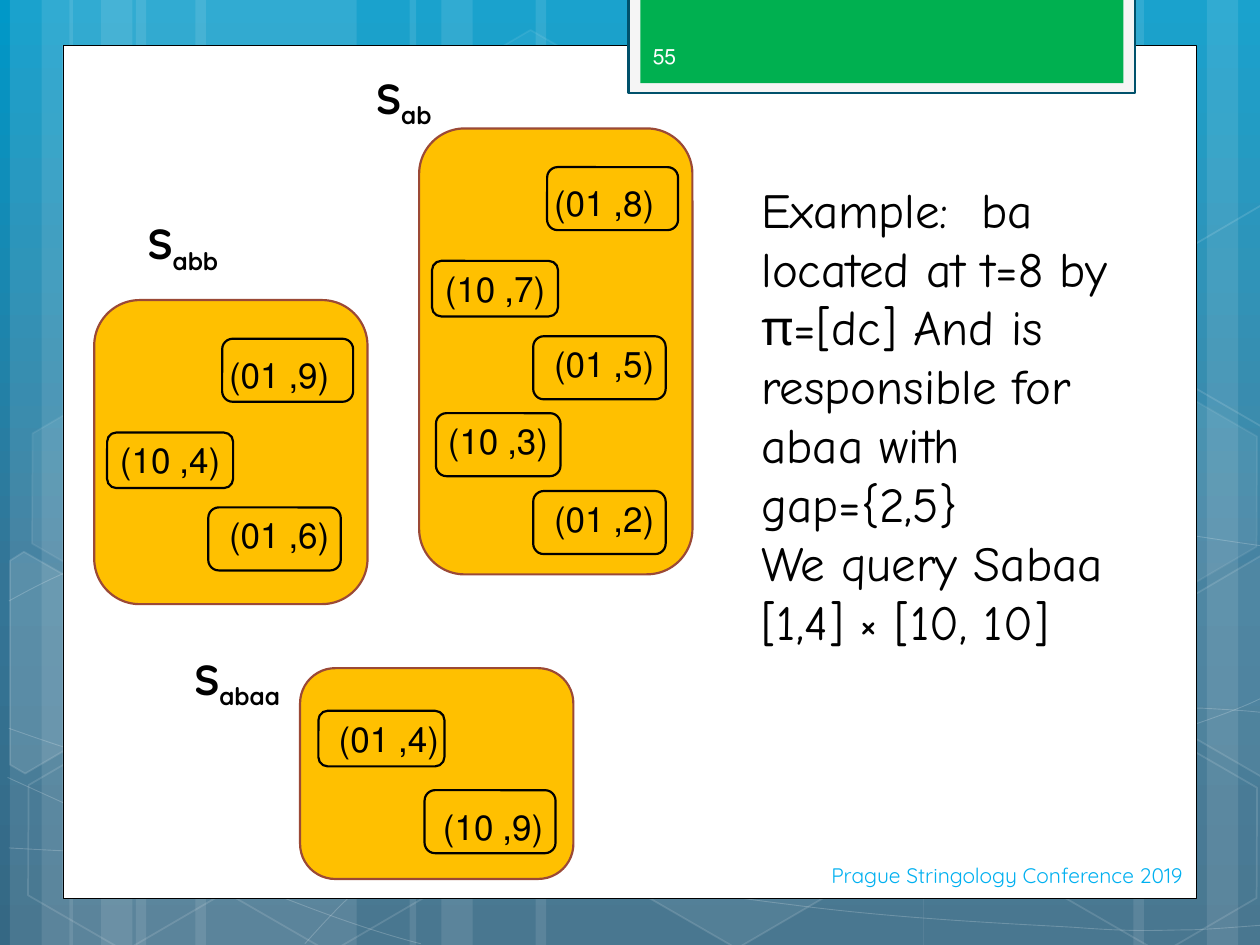
from copy import deepcopy

from lxml import etree
from pptx import Presentation
from pptx.dml.color import RGBColor
from pptx.enum.shapes import MSO_SHAPE as Shape
from pptx.enum.text import MSO_ANCHOR as Anchor, MSO_AUTO_SIZE as AutoSize, PP_ALIGN as Align
from pptx.oxml.ns import qn
from pptx.util import Cm, Pt

WHITE = RGBColor(0xFF, 0xFF, 0xFF)
BLACK = RGBColor(0x00, 0x00, 0x00)
SKY = (RGBColor(0x00, 0x98, 0xC8), RGBColor(0x34, 0x75, 0x96), RGBColor(0x35, 0x68, 0x84))
TAB_EDGE = RGBColor(0x00, 0x51, 0x6B)
TAB_PAPER = RGBColor(0xF5, 0xF5, 0xF5)
GREEN = RGBColor(0x00, 0xB0, 0x50)
NUMBER = RGBColor(0xFE, 0xFE, 0xFE)
FOOTER = RGBColor(0x00, 0xB0, 0xF0)
AMBER = RGBColor(0xFF, 0xC0, 0x00)
BROWN = RGBColor(0x9B, 0x49, 0x36)

HAND, ROUND = "Comic Neue", "Quicksand"
INCH = 2.54

WAVES = [
    [(0.07, 6.73), (0.61, 6.76), (1.15, 6.79), (1.9, 6.78), (2.65, 6.77), (3.58, 6.75), (4.58, 6.65),
     (5.58, 6.55), (7, 6.36), (7.92, 6.17), (8.83, 5.98), (9.77, 5.68), (10.07, 5.51)],
    [(0.07, 4.77), (0.36, 4.61), (0.65, 4.46), (1.21, 4.31), (1.78, 4.16), (2.59, 3.94), (3.47, 3.87),
     (4.36, 3.8), (5.44, 3.79), (6.54, 3.87), (7.64, 3.95), (9.47, 4.26), (10.07, 4.34)],
    [(0.06, 6.17), (1.27, 6.72), (2.47, 7.27), (3.34, 7.49)],
    [(0.07, 5.78), (0.38, 5.89), (0.7, 6), (1.28, 6.16), (1.86, 6.31), (2.73, 6.56), (3.57, 6.73),
     (4.4, 6.9), (5.45, 7.08), (6.28, 7.18), (7.11, 7.29), (8, 7.33), (8.53, 7.36),
     (9.05, 7.4), (9.19, 7.38), (9.45, 7.38), (9.71, 7.37), (9.89, 7.35), (10.07, 7.34)],
    [(2.42, 7.49), (2.6, 7.29), (2.78, 7.09), (3.02, 6.91), (3.26, 6.73), (3.6, 6.53), (3.88, 6.39),
     (4.16, 6.25), (4.33, 6.19), (4.7, 6.09), (5.06, 5.99), (5.73, 5.85), (6.08, 5.78),
     (6.44, 5.71), (6.49, 5.71), (6.8, 5.69), (7.11, 5.66), (7.6, 5.63), (7.94, 5.62),
     (8.29, 5.61), (8.86, 5.62), (8.86, 5.62), (9.08, 5.62), (9.3, 5.62), (9.53, 5.62),
     (9.71, 5.63), (9.88, 5.64), (9.97, 5.65), (10.06, 5.66), (10.03, 5.65), (10.06, 5.66)],
]
HEXAGONS = [(8.48, 0.91, 4, 8), (12.62, 14.96, 6, 12), (0.28, 15.01, 0, 12), (0.36, 7.92, 7, 8),
            (4.42, 15.04, 0, 12), (19.13, 11.51, 10, 12), (21.18, 15.06, 0, 12), (21.18, 7.98, 7, 8)]
CUT_HEXAGONS = [
    ([(0.08, 4.45), (0.19, 4.38), (0.96, 4.82), (0.95, 5.7), (0.2, 6.14), (0.08, 6.07)], 10),
    ([(9.26, 4.85), (10.01, 4.41), (10.09, 4.46), (10.09, 6.13), (10.02, 6.17), (9.26, 5.73)], 4),
    ([(9.26, 2.07), (10.01, 1.63), (10.1, 1.68), (10.09, 3.35), (10.02, 3.39), (9.26, 2.95)], 0),
]

LOWER = (2.07, 2.92, 0, 2.3, 2.67, 1.27)
LEFT = (-0.61, 3.4, 0, 0.26, 2.54, 1.12)
MIDDLE = (0.13, 2.72, 0, 0.34, 2.51, 1.27)
TOP = (1.84, 3.15, 0.17, 2.58, 2.64, 1.27)
FIRST = (-0.35, 3.4, 0, 0.37, 2.54, 1.12)
LAST = (2, 3.15, 0.18, 2.51, 2.64, 1.27)
SETS = [
    ((8.45, 2.59, 5.51, 8.99), "ab", (-1.71, -1.26, 2.21),
     [("(2, 01)", 7.31, LOWER), ("(7, 10)", 2.67, LEFT), ("(3, 10)", 5.74, MIDDLE),
      ("(8, 01)", 0.78, TOP), ("(5, 01)", 4.19, LOWER)]),
    ((1.9, 6.05, 5.51, 6.13), "abb", (0.54, -1.79, 2.21),
     [("(4, 10)", 2.67, LEFT), ("(9, 01)", 0.78, TOP), ("(6, 01)", 4.18, LOWER)]),
    ((6.05, 13.47, 5.51, 4.25), "abaa", (-3.05, -0.43, 2.9),
     [("(4, 01)", 0.86, FIRST), ("(9, 10)", 2.46, LAST)]),
]


def set_alpha(fill, percent):
    """Make a solid fill partly transparent."""
    color = fill._xPr.find(qn("a:solidFill"))[0]
    etree.SubElement(color, qn("a:alpha")).set("val", str(percent * 1000))


def paint(shape, fill=None, line=None, width=1.25, fill_alpha=100, line_alpha=100):
    """Set fill, line and transparency and drop the shadow."""
    shape.shadow.inherit = False
    for part, color, alpha in ((shape.fill, fill, fill_alpha), (shape.line.fill, line, line_alpha)):
        if color is None or alpha == 0:
            part.background()
            continue
        part.solid()
        part.fore_color.rgb = color
        if alpha < 100:
            set_alpha(part, alpha)
    if line is not None:
        shape.line.width = Pt(width)


def add_block(slide, kind, box, **style):
    """Add a painted preset shape in a box given in centimetres."""
    shape = slide.shapes.add_shape(kind, *map(Cm, box))
    paint(shape, **style)
    return shape


def add_outline(slide, points, close, **style):
    """Add a painted freeform through points given in inches."""
    places = [(Cm(x * INCH), Cm(y * INCH)) for x, y in points]
    builder = slide.shapes.build_freeform(*places[0], scale=1.0)
    builder.add_line_segments(places[1:], close=close)
    shape = builder.convert_to_shape()
    paint(shape, **style)
    return shape


def bend(shape):
    """Turn each three line segments of a freeform into one cubic curve."""
    segments = shape._element.findall(".//" + qn("a:lnTo"))
    for start in range(0, len(segments), 3):
        curve = etree.Element(qn("a:cubicBezTo"))
        segments[start].addprevious(curve)
        for segment in segments[start:start + 3]:
            curve.append(segment[0])
            segment.getparent().remove(segment)


def add_text(slide, box, lines, font, size, color, align=None, rtl=True, anchor=Anchor.TOP, grow=True):
    """Add a text box and return its text frame."""
    text_frame = slide.shapes.add_textbox(*map(Cm, box)).text_frame
    text_frame.word_wrap = True
    text_frame.vertical_anchor = anchor
    text_frame.auto_size = AutoSize.SHAPE_TO_FIT_TEXT if grow else AutoSize.NONE
    text_frame.text = "\n".join(lines)
    for paragraph in text_frame.paragraphs:
        paragraph.alignment = align
        if rtl:
            paragraph._p.get_or_add_pPr().set("rtl", "1")
        for run in paragraph.runs:
            run.font.name, run.font.size = font, Pt(size)
            run.font.color.rgb = color
    return text_frame


def set_background(slide):
    """Fill the slide with the vertical blue gradient."""
    fill = slide.background.fill
    fill.gradient()
    fill.gradient_angle = 270
    stop_list = slide._element.find(".//" + qn("a:gsLst"))
    stop_list.insert(1, deepcopy(stop_list[0]))
    for stop, position, color in zip(fill.gradient_stops, (0, 0.62, 1), SKY):
        stop.position = position
        stop.color.rgb = color


def add_stripes(slide, edge, wide=4.45, mirrored=False):
    """Add a cluster of three pale stripes measured from its edge."""
    for offset, width in ((2.54, wide), (0, 1.27), (0.64, 2.11)):
        left = edge - offset - width if mirrored else edge + offset
        add_block(slide, Shape.RECTANGLE, (left, 0, width, 19.05), fill=WHITE, fill_alpha=10)


def add_decoration(slide):
    """Add the stripes, waves and hexagons behind the page."""
    add_stripes(slide, 0.2)
    add_stripes(slide, 1.4)
    add_stripes(slide, 25.6, mirrored=True)
    add_stripes(slide, 8.26, wide=7.82)
    for wave in WAVES:
        bend(add_outline(slide, wave, False, line=WHITE, width=0.5, line_alpha=20))
    for left, top, fill_alpha, line_alpha in HEXAGONS:
        hexagon = add_block(slide, Shape.HEXAGON, (left, top, 4.45, 3.86), fill=WHITE, line=WHITE,
                            width=1, fill_alpha=fill_alpha, line_alpha=line_alpha)
        hexagon.adjustments[0] = 0.285
        hexagon.rotation = 30
    for points, fill_alpha in CUT_HEXAGONS:
        add_outline(slide, points, True, fill=WHITE, line=WHITE, width=1,
                    fill_alpha=fill_alpha, line_alpha=12)


def add_page(slide, box):
    """Add the white page with its number tab and footer."""
    left, top = box[:2]
    add_block(slide, Shape.RECTANGLE, box, fill=WHITE, line=BLACK, width=0.5)
    add_block(slide, Shape.RECTANGLE, (left + 11.4, top - 0.96, 10.21, 1.93), fill=TAB_PAPER, line=TAB_EDGE)
    add_block(slide, Shape.RECTANGLE, (left + 11.64, top - 0.96, 9.74, 1.73), fill=GREEN)
    add_text(slide, (left + 11.64, top - 0.29, 3.71, 1.02), ["55"], ROUND, 12, NUMBER,
             anchor=Anchor.MIDDLE, grow=False)
    add_text(slide, (left + 13.1, top + 16.22, 9.73, 1.02), ["Prague Stringology Conference 2019"],
             ROUND, 12, FOOTER, Align.RIGHT, anchor=Anchor.MIDDLE, grow=False)


def add_set(slide, box, subscript, label_place, entries):
    """Add one panel with its framed pairs and its label."""
    left, top = box[:2]
    add_block(slide, Shape.ROUNDED_RECTANGLE, box, fill=AMBER, line=BROWN)
    for pair, drop, (text_x, text_width, text_drop, frame_x, width, height) in entries:
        add_text(slide, (left + text_x, top + drop + text_drop, text_width, 1.12), [pair],
                 HAND, 20, BLACK, Align.RIGHT)
        add_block(slide, Shape.ROUNDED_RECTANGLE, (left + frame_x, top + drop, width, height), line=BLACK)
    label_x, label_y, label_width = label_place
    label = add_text(slide, (left + label_x, top + label_y, label_width, 1.27), ["S"],
                     ROUND, 24, BLACK, Align.RIGHT)
    paragraph = label.paragraphs[0]
    run = paragraph.add_run()
    run.text = subscript
    run.font.name, run.font.size = ROUND, Pt(24)
    run.font.color.rgb = BLACK
    run.font._element.set("baseline", "-25000")
    for part in paragraph.runs:
        part.font.bold = True


def main():
    """Build and save the slide."""
    presentation = Presentation()
    presentation.slide_width, presentation.slide_height = Cm(25.4), Cm(19.05)
    slide = presentation.slides.add_slide(presentation.slide_layouts[6])
    set_background(slide)
    add_decoration(slide)
    add_page(slide, (1.27, 0.91, 22.86, 17.2))
    for box, subscript, label_place, entries in SETS:
        add_set(slide, box, subscript, label_place, entries)
    add_text(slide, (15.1, 3.49, 8.74, 11.02),
             ["Example:  ba located at t=8 by π=[dc] And is responsible for abaa with gap={2,5}",
              "We query Sabaa [1,4] × [10, 10]"], HAND, 28, BLACK, rtl=False)
    presentation.save("out.pptx")


if __name__ == "__main__":
    main()
